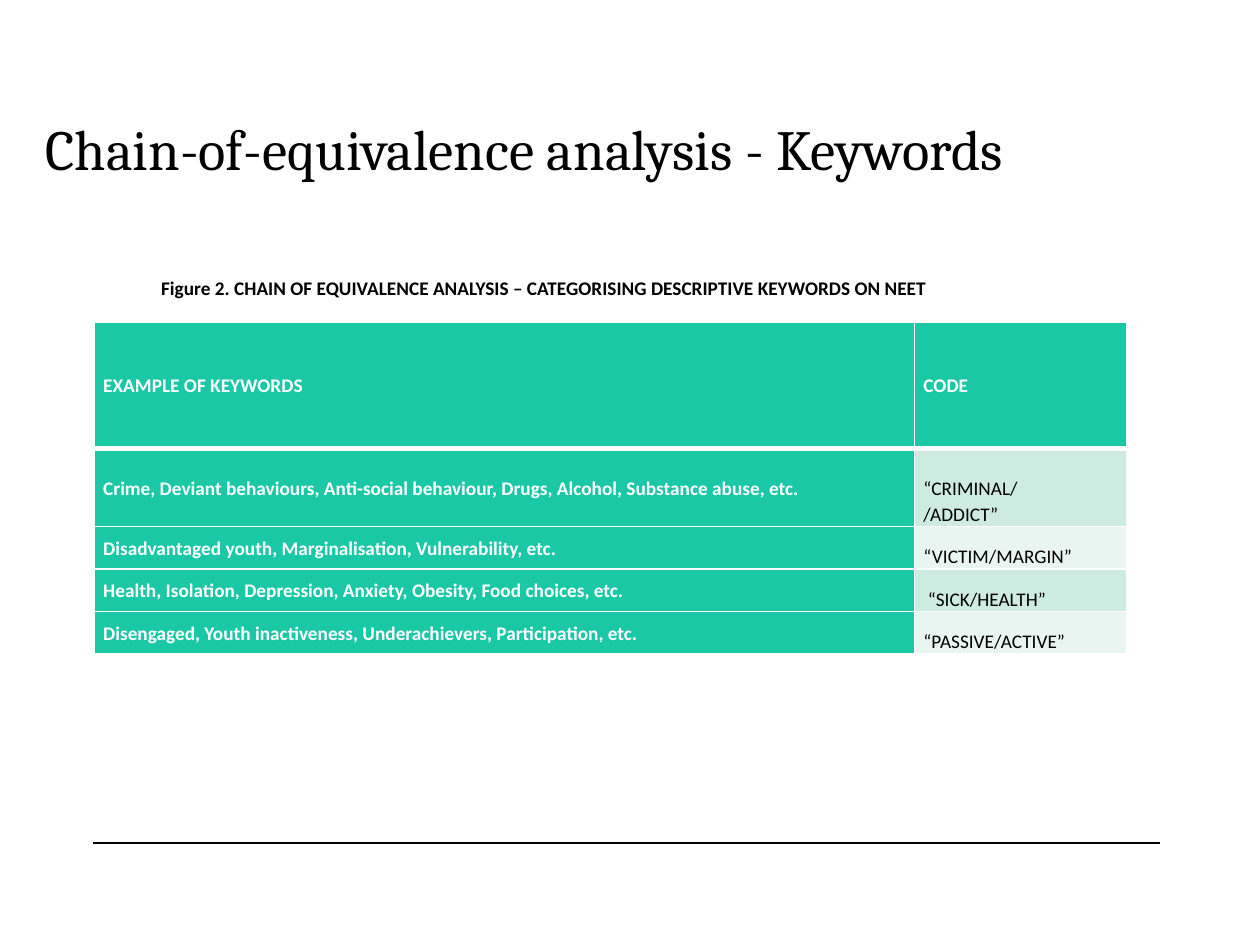
from lxml import etree
from pptx import Presentation
from pptx.dml.color import RGBColor
from pptx.enum.shapes import MSO_CONNECTOR
from pptx.enum.text import MSO_ANCHOR, MSO_AUTO_SIZE, PP_ALIGN
from pptx.oxml.ns import qn
from pptx.util import Pt

TOP, MIDDLE, BOTTOM = MSO_ANCHOR.TOP, MSO_ANCHOR.MIDDLE, MSO_ANCHOR.BOTTOM
LEFT = PP_ALIGN.LEFT
NO_FIT = MSO_AUTO_SIZE.NONE
STRAIGHT = MSO_CONNECTOR.STRAIGHT

BLACK = RGBColor(0x00, 0x00, 0x00)
WHITE = RGBColor(0xFF, 0xFF, 0xFF)
TEAL = RGBColor(0x1B, 0xC8, 0xA6)
BANDS = RGBColor(0xCD, 0xEB, 0xE1), RGBColor(0xE8, 0xF5, 0xF1)

KEYWORD_CODES = [
    ("EXAMPLE OF KEYWORDS", "CODE"),
    ("Crime, Deviant behaviours, Anti-social behaviour, Drugs, Alcohol, "
     "Substance abuse, etc.", "“CRIMINAL/\n/ADDICT”"),
    ("Disadvantaged youth, Marginalisation, Vulnerability, etc.", "“VICTIM/MARGIN”"),
    ("Health, Isolation, Depression, Anxiety, Obesity, Food choices, etc.",
     " “SICK/HEALTH”"),
    ("Disengaged, Youth inactiveness, Underachievers, Participation, etc.",
     "“PASSIVE/ACTIVE”"),
]
COLUMN_WIDTHS = [468.7, 121]
ROW_HEIGHTS = [72, 44.6, 24.3, 24.3, 24.3]


def apply(target, values):
    for name, value in values.items():
        setattr(target, name, value)


class KeywordSlide:
    """Style and drawing methods for the current slide; lengths in points."""

    TITLE = {"name": "Cambria", "size": Pt(32.4), "bold": False}
    BODY = {"name": "Calibri", "size": Pt(11), "bold": False}
    STRONG = {**BODY, "bold": True}
    CELL = {"margin_left": Pt(5), "margin_right": Pt(5),
            "margin_top": 0, "margin_bottom": 0}

    def __init__(self, deck):
        self.slide = deck.slides.add_slide(deck.slide_layouts[5])

    def set_text(self, frame, text, font, color, spacing=1.0):
        frame.text = text
        for paragraph in frame.paragraphs:
            apply(paragraph, {"alignment": LEFT, "line_spacing": spacing})
            for run in paragraph.runs:
                apply(run.font, font)
                run.font.color.rgb = color

    def title(self, text, left, top, width, height):
        heading = self.slide.shapes.title
        apply(heading, {"left": Pt(left), "top": Pt(top),
                        "width": Pt(width), "height": Pt(height)})
        apply(heading.text_frame, {"vertical_anchor": TOP, "auto_size": NO_FIT,
                                   "word_wrap": True})
        self.set_text(heading.text_frame, text, self.TITLE, BLACK)

    def caption(self, text, left, top, width, height):
        box = self.slide.shapes.add_textbox(Pt(left), Pt(top), Pt(width), Pt(height))
        apply(box.text_frame, {"vertical_anchor": TOP, "word_wrap": True})
        self.set_text(box.text_frame, text, self.STRONG, BLACK)

    def rule(self, left, top, right):
        line = self.slide.shapes.add_connector(
            STRAIGHT, Pt(left), Pt(top), Pt(right), Pt(top))
        line.line.color.rgb = BLACK
        line.line.width = Pt(0.75)
        etree.SubElement(line._element.spPr, qn("a:effectLst"))

    def borders(self, cell, top=1, bottom=1):
        properties = cell._tc.get_or_add_tcPr()
        for side, width in (("L", 1), ("R", 1), ("T", top), ("B", bottom)):
            edge = etree.SubElement(properties, qn(f"a:ln{side}"), w=str(Pt(width)))
            fill = etree.SubElement(edge, qn("a:solidFill"))
            etree.SubElement(fill, qn("a:srgbClr"), val=str(WHITE))

    def table(self, rows, left, top, widths, heights):
        table = self.slide.shapes.add_table(
            len(rows), len(widths), Pt(left), Pt(top),
            Pt(sum(widths)), Pt(sum(heights))).table
        for column, width in zip(table.columns, widths):
            column.width = Pt(width)
        for row, height in zip(table.rows, heights):
            row.height = Pt(height)
        for r, texts in enumerate(rows):
            for c, text in enumerate(texts):
                cell = table.cell(r, c)
                is_code = r > 0 and c == 1
                apply(cell, self.CELL)
                cell.vertical_anchor = BOTTOM if is_code else MIDDLE
                # The header is set off by a heavier line
                self.borders(cell, top=3 if r == 1 else 1, bottom=3 if r == 0 else 1)
                cell.fill.solid()
                cell.fill.fore_color.rgb = BANDS[(r - 1) % 2] if is_code else TEAL
                self.set_text(cell.text_frame, text,
                              self.BODY if is_code else self.STRONG,
                              BLACK if is_code else WHITE, spacing=1.07)


def main():
    deck = Presentation()
    deck.slide_width, deck.slide_height = Pt(720), Pt(540)
    page = KeywordSlide(deck)

    # Footer rule
    page.rule(53.3, 481.7, 663.1)
    # Heading
    page.title("Chain-of-equivalence analysis - Keywords", 18.7, 61.2, 609, 65.5)
    # Keyword table with its caption
    page.table(KEYWORD_CODES, 54, 184.3, COLUMN_WIDTHS, ROW_HEIGHTS)
    page.caption("Figure 2. CHAIN OF EQUIVALENCE ANALYSIS – CATEGORISING "
                 "DESCRIPTIVE KEYWORDS ON NEET", 85, 154.1, 498.2, 42.5)

    deck.save("out.pptx")


if __name__ == "__main__":
    main()
